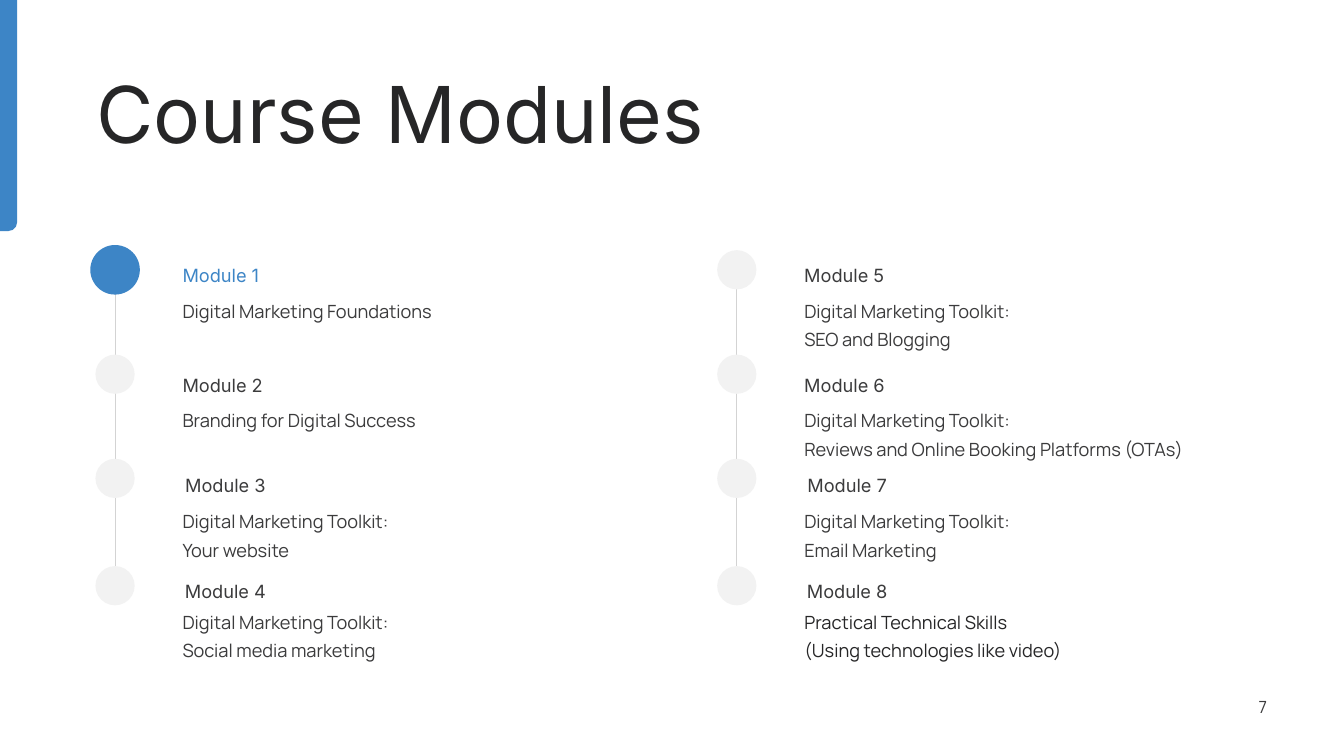
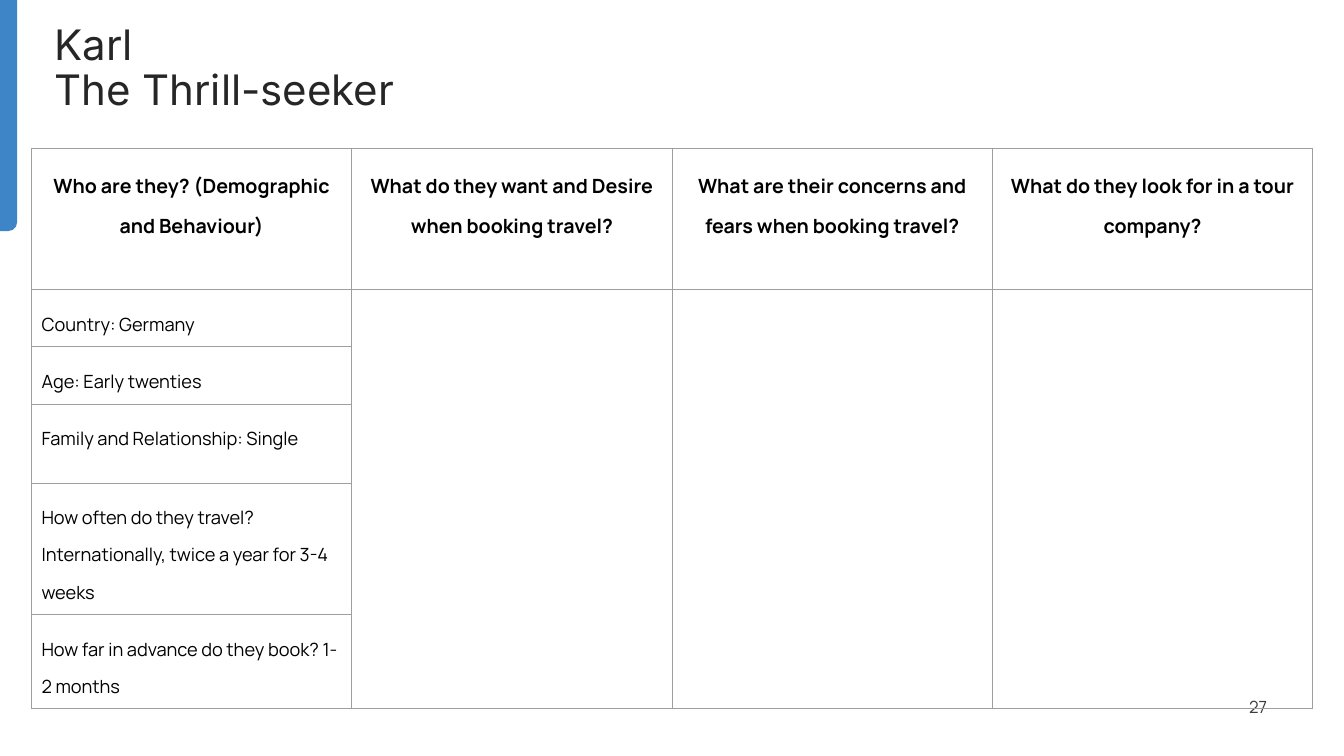
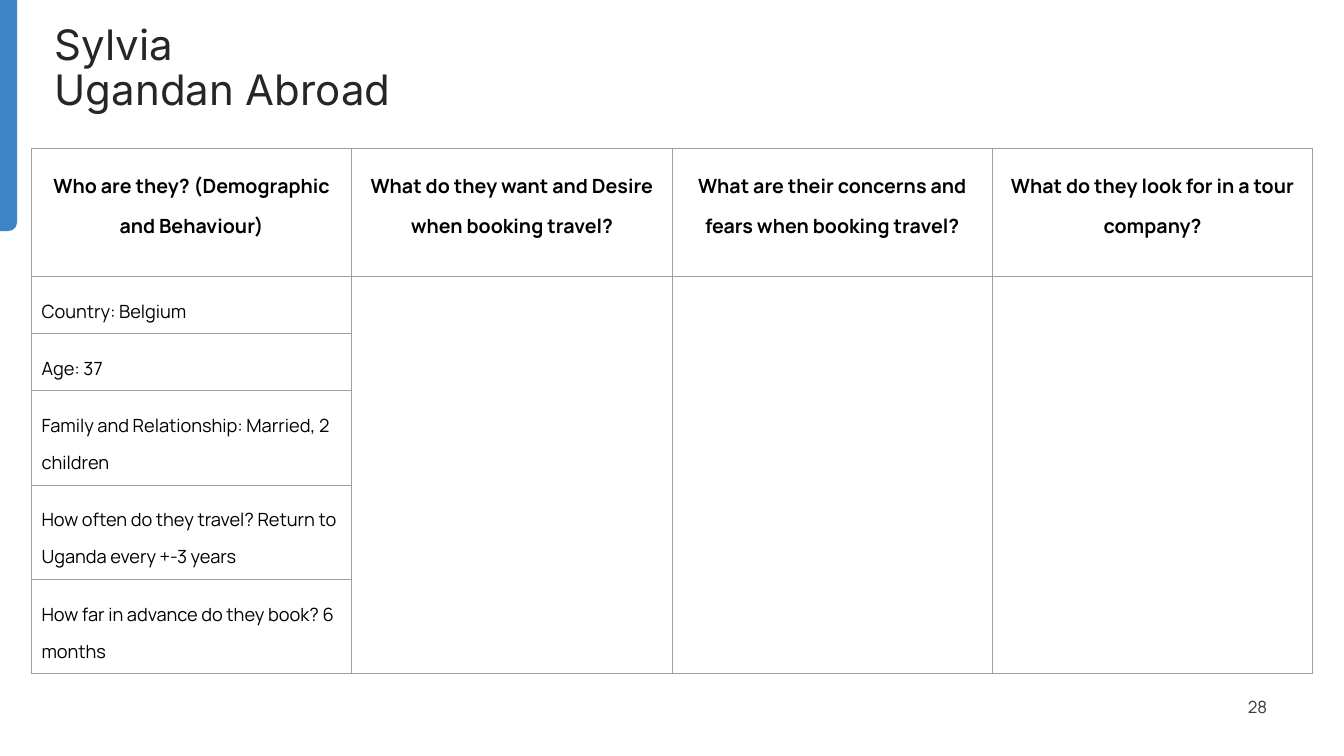
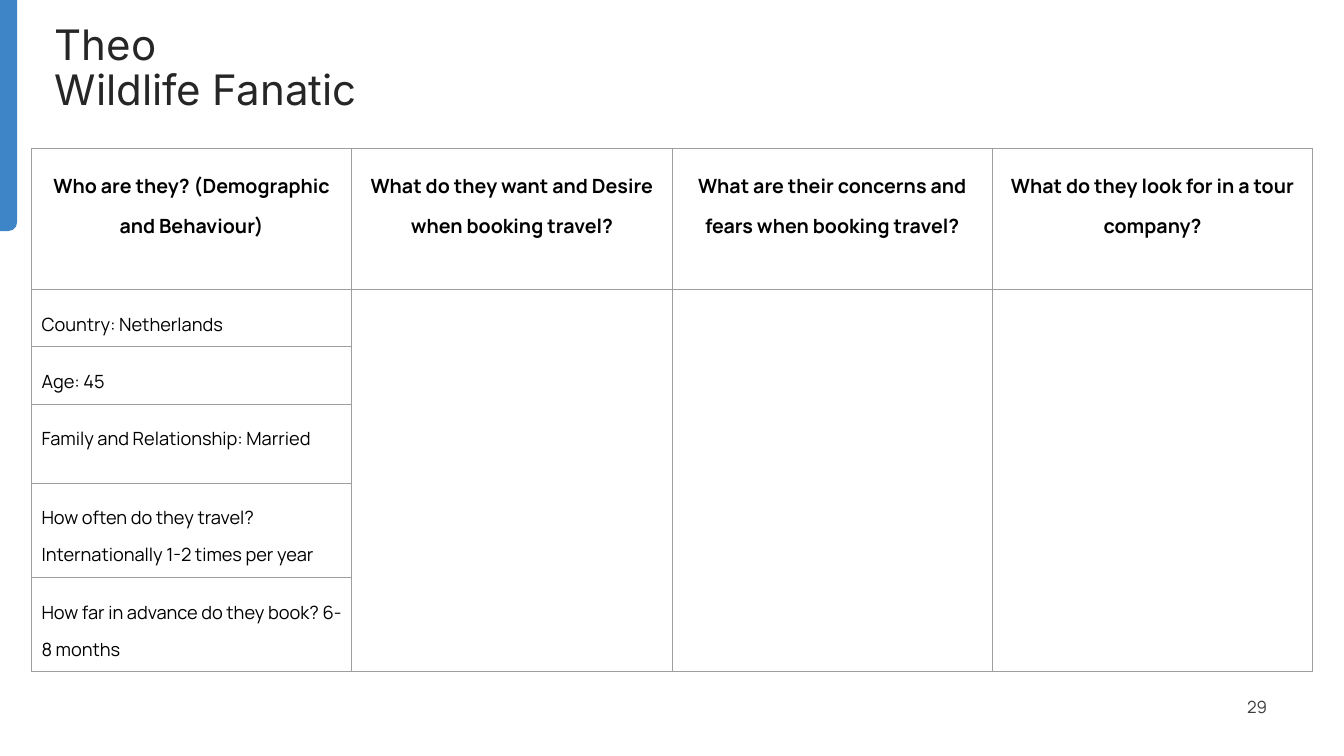
from lxml import etree
from pptx import Presentation
from pptx.dml.color import RGBColor
from pptx.enum.shapes import MSO_CONNECTOR, MSO_SHAPE
from pptx.enum.text import MSO_ANCHOR, MSO_AUTO_SIZE, PP_ALIGN
from pptx.oxml.ns import qn
from pptx.util import Pt

LEFT, CENTER, RIGHT = PP_ALIGN.LEFT, PP_ALIGN.CENTER, PP_ALIGN.RIGHT
TOP, MIDDLE = MSO_ANCHOR.TOP, MSO_ANCHOR.MIDDLE
OVAL, ROUND_CORNER = MSO_SHAPE.OVAL, MSO_SHAPE.ROUND_1_RECTANGLE
STRAIGHT = MSO_CONNECTOR.STRAIGHT

COLORS = {"accent": "3D85C6", "title": "262627", "text": "3B3B3C", "dot": "F2F2F2",
          "rail": "D3D3D3", "border": "9E9E9E", "cell": "000000"}
HEAD_FONT, BODY_FONT = "Inter", "Manrope"

TOOLKIT = "Digital Marketing Toolkit:\n"
MODULE_COLUMNS = [
    ["Digital Marketing Foundations", "Branding for Digital Success",
     TOOLKIT + "Your website", TOOLKIT + "Social media marketing"],
    [TOOLKIT + "SEO and Blogging",
     TOOLKIT + "Reviews and Online Booking Platforms (OTAs)",
     TOOLKIT + "Email Marketing",
     "Practical Technical Skills\n(Using technologies like video)"],
]
# dot centre, heading top, body top, heading width, heading alignment
MODULE_ROWS = [
    (192.7, 184.3, 209.5, 88, LEFT),
    (267.3, 262.8, 288, 88, LEFT),
    (341.7, 334.1, 360, 61.2, CENTER),
    (418.4, 409.7, 432, 61.2, CENTER),
]
RAIL_X, MODULE_TEXT_X, COLUMN_STEP = 82.2, 130.4, 444.1
DOT, ACTIVE_DOT = 28, 35.4

QUESTIONS = ["Who are they? (Demographic and Behaviour)",
             "What do they want and Desire when booking travel?",
             "What are their concerns and fears when booking travel?",
             "What do they look for in a tour company?"]
FACTS = ["Country: ", "Age: ", "Family and Relationship: ",
         "How often do they travel? ", "How far in advance do they book? "]
PERSONAS = [
    {"title": "Karl\nThe Thrill-seeker", "page": 27,
     "answers": ["Germany", "Early twenties", "Single",
                 "Internationally, twice a year for 3-4 weeks", "1-2 months"],
     "rows": [100.7, 40.9, 40.9, 56.5, 93.6, 67.2]},
    {"title": "Sylvia\nUgandan Abroad", "page": 28,
     "answers": ["Belgium", "37", "Married, 2 children",
                 "Return to Uganda every +-3 years", "6 months"],
     "rows": [91.2, 40.9, 40.9, 67.2, 67.2, 67.2]},
    {"title": "Theo\nWildlife Fanatic", "page": 29,
     "answers": ["Netherlands", "45", "Married",
                 "Internationally 1-2 times per year", "6-8 months"],
     "rows": [100.7, 40.9, 40.9, 56.5, 67.2, 67.2]},
]
TABLE_X, TABLE_Y, TABLE_COLUMN = 22.5, 106.2, 228.8


def rgb(name):
    return RGBColor.from_string(COLORS[name])


def write(tf, text, size=13, font=BODY_FONT, color="text", bold=False,
          align=LEFT, spacing=1.0):
    for i, line in enumerate(text.split("\n")):
        p = tf.paragraphs[0] if i == 0 else tf.add_paragraph()
        p.alignment, p.line_spacing = align, spacing
        r = p.add_run()
        r.text = line
        r.font.size, r.font.name, r.font.bold = Pt(size), font, bold
        r.font.color.rgb = rgb(color)


def set_frame(tf, inset=(0, 0), anchor=TOP):
    tf.word_wrap, tf.auto_size, tf.vertical_anchor = True, MSO_AUTO_SIZE.NONE, anchor
    tf.margin_left = tf.margin_right = Pt(inset[0])
    tf.margin_top = tf.margin_bottom = Pt(inset[1])


def add_text(slide, text, x, y, w, h, inset=(0, 0), anchor=TOP, **fmt):
    tf = slide.shapes.add_textbox(Pt(x), Pt(y), Pt(w), Pt(h)).text_frame
    set_frame(tf, inset, anchor)
    write(tf, text, **fmt)


def add_filled(slide, kind, x, y, w, h, color):
    sp = slide.shapes.add_shape(kind, Pt(x), Pt(y), Pt(w), Pt(h))
    sp.shadow.inherit = False
    sp.fill.solid()
    sp.fill.fore_color.rgb = rgb(color)
    sp.line.fill.background()
    return sp


def add_slide(prs, title, page, box, size, inset=0):
    """Add a slide with the side band, title and page number."""
    slide = prs.slides.add_slide(prs.slide_layouts[5])
    length, thickness = 165, 12.2
    band = add_filled(slide, ROUND_CORNER, (thickness - length) / 2,
                      (length - thickness) / 2, length, thickness, "accent")
    band.adjustments[0] = 0.5
    band.rotation = 90
    sp = slide.shapes.title
    sp.left, sp.top, sp.width, sp.height = map(Pt, box)
    set_frame(sp.text_frame, (inset, inset))
    write(sp.text_frame, title, size=size, font=HEAD_FONT, color="title", spacing=0.9)
    add_text(slide, str(page), 869.8, 490.3, 35.3, 28.8, (0, 3.6), MIDDLE,
             size=12, align=RIGHT)
    return slide


def add_rail(slide, x, top, bottom):
    line = slide.shapes.add_connector(STRAIGHT, Pt(x), Pt(top), Pt(x), Pt(bottom))
    line.line.color.rgb, line.line.width = rgb("rail"), Pt(0.75)
    etree.SubElement(line.element.spPr, qn("a:effectLst"))


def add_modules(prs):
    slide = add_slide(prs, "Course Modules", 7, (69.1, 54, 836.6, 64), 56)
    number = 0
    for col, bodies in enumerate(MODULE_COLUMNS):
        x, text_x = RAIL_X + col * COLUMN_STEP, MODULE_TEXT_X + col * COLUMN_STEP
        add_rail(slide, x, MODULE_ROWS[0][0], MODULE_ROWS[-1][0])
        for body, (dot_y, head_y, body_y, head_w, align) in zip(bodies, MODULE_ROWS):
            number += 1
            active = number == 1
            d = ACTIVE_DOT if active else DOT
            add_filled(slide, OVAL, x - d / 2, dot_y - d / 2, d, d,
                       "accent" if active else "dot")
            add_text(slide, f"Module {number}", text_x, head_y, head_w, 16,
                     font=HEAD_FONT, color="accent" if active else "text",
                     align=align, spacing=1.3)
            add_text(slide, body, text_x, body_y, 295, 36, spacing=1.3,
                     color="title" if number == 8 else "text")


def style_cell(cell):
    """Give the cell thin borders, equal margins and no fill."""
    tcPr = cell._tc.get_or_add_tcPr()
    for side in ("a:lnL", "a:lnR", "a:lnT", "a:lnB"):
        ln = etree.SubElement(tcPr, qn(side), w=str(Pt(0.75)))
        fill = etree.SubElement(ln, qn("a:solidFill"))
        etree.SubElement(fill, qn("a:srgbClr"), val=COLORS["border"])
    cell.fill.background()
    cell.margin_left = cell.margin_right = cell.margin_top = cell.margin_bottom = Pt(7.2)


def add_persona(prs, persona):
    slide = add_slide(prs, persona["title"], persona["page"],
                      (31.9, 10.1, 378, 80), 30, 7.2)
    heights, columns = persona["rows"], len(QUESTIONS)
    table = slide.shapes.add_table(
        len(heights), columns, Pt(TABLE_X), Pt(TABLE_Y),
        Pt(TABLE_COLUMN * columns), Pt(sum(heights))).table
    table.first_row = table.horz_banding = False
    for row, height in zip(table.rows, heights):
        row.height = Pt(height)
    for cell in table.iter_cells():
        style_cell(cell)
    for col, question in enumerate(QUESTIONS):
        write(table.cell(0, col).text_frame, question, size=14, color="cell",
              bold=True, align=CENTER, spacing=1.5)
        if col:
            table.cell(1, col).merge(table.cell(len(FACTS), col))
    for row, (fact, answer) in enumerate(zip(FACTS, persona["answers"]), 1):
        write(table.cell(row, 0).text_frame, fact + answer, color="cell", spacing=1.5)


def main():
    prs = Presentation()
    prs.slide_width, prs.slide_height = Pt(960), Pt(540)
    add_modules(prs)
    for persona in PERSONAS:
        add_persona(prs, persona)
    prs.save("out.pptx")


if __name__ == "__main__":
    main()
